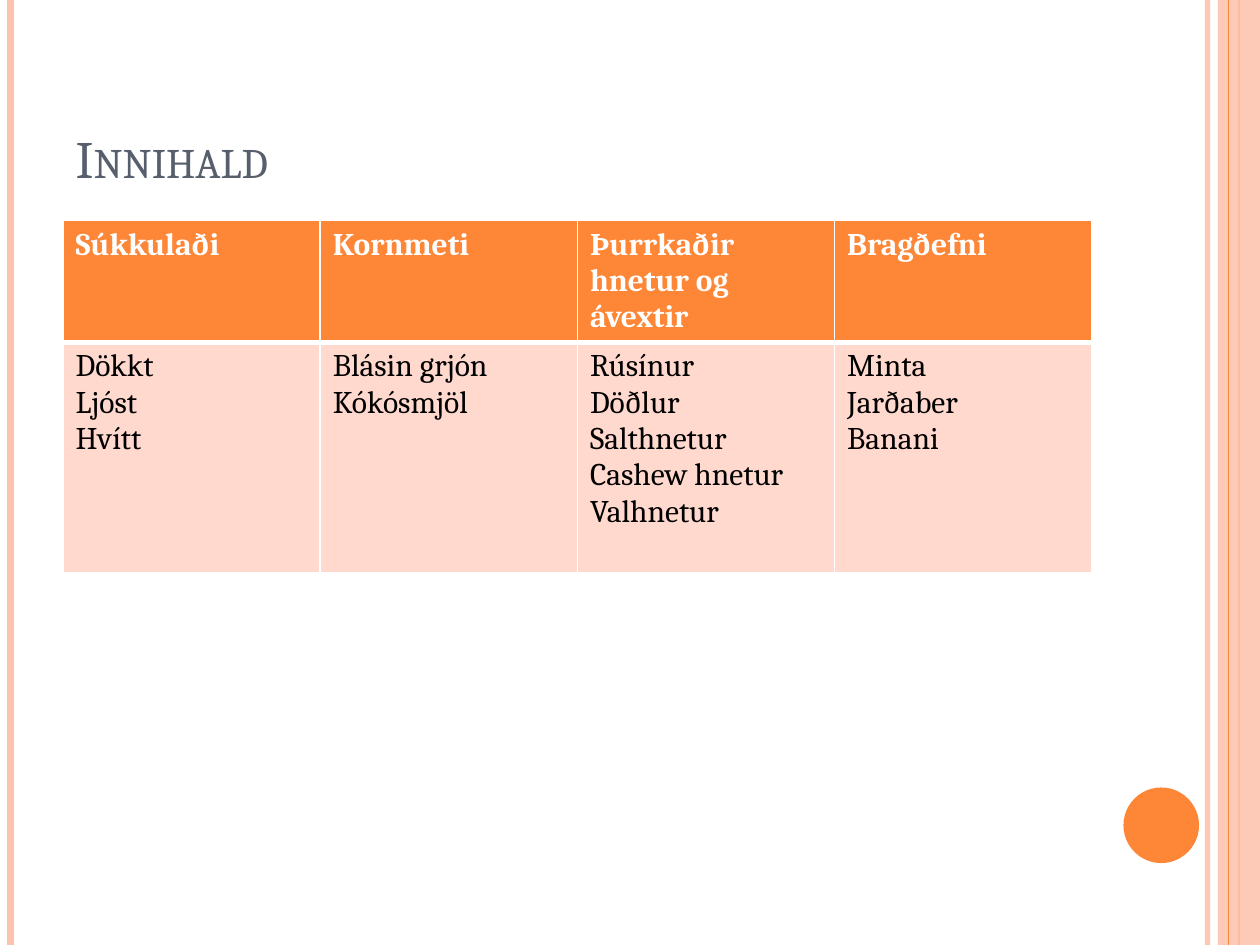
"""Build the ingredients slide with its table."""
from pptx import Presentation
from pptx import util as u
from pptx.dml import color
from pptx.enum import shapes, text
from pptx.oxml import ns
from lxml import etree

FACE = "Cambria"
ORANGE, PEACH, PALE, WHITE = "FE8637", "FEC3AE", "FFD9CE", "FFFFFF"
WIDE, HIGH = 720, 540
HEADS = ["Súkkulaði", "Kornmeti", "Þurrkaðir hnetur og ávextir", "Bragðefni"]
ITEMS = [
    "Dökkt\nLjóst\nHvítt",
    "Blásin grjón\nKókósmjöl",
    "Rúsínur\nDöðlur\nSalthnetur\nCashew hnetur\nValhnetur",
    "Minta\nJarðaber\nBanani",
]


def pts(*nums):
    """Turn numbers into point lengths."""
    return [u.Pt(n) for n in nums]


def paint(form, shade):
    """Give a fill or font colour format a solid hex colour."""
    if hasattr(form, "solid"):
        form.solid()
        form = form.fore_color
    form.rgb = color.RGBColor.from_string(shade)


def fade(part, share):
    """Set the opacity of the solid colour in an element, in percent."""
    tone = next(part.iter(ns.qn("a:srgbClr")))
    etree.SubElement(tone, ns.qn("a:alpha"), val=str(share * 1000))


def style(run, shade, **looks):
    """Apply font values and a colour to a run."""
    for name, value in {"name": FACE, **looks}.items():
        setattr(run.font, name, value)
    paint(run.font.color, shade)


def rule(slide, left, shade, width, share=100):
    """Draw a full-height vertical line."""
    line = slide.shapes.add_connector(
        shapes.MSO_CONNECTOR.STRAIGHT, *pts(left, 0, left, HIGH))
    line.line.width = u.Pt(width)
    paint(line.line.fill, shade)
    props = line._element.spPr
    etree.SubElement(props, ns.qn("a:effectLst"))
    if share < 100:
        fade(props, share)


def block(slide, kind, box, shade, share=100):
    """Draw a plain filled shape."""
    shape = slide.shapes.add_shape(kind, *pts(*box))
    shape.shadow.inherit = False
    shape.line.fill.background()
    paint(shape.fill, shade)
    if share < 100:
        fade(shape._element.spPr, share)


def head(slide, words):
    """Place and format the title."""
    title = slide.shapes.title
    place = dict(zip(("left", "top", "width", "height"), pts(36, 21.6, 588, 90)))
    for name, value in place.items():
        setattr(title, name, value)
    frame = title.text_frame
    frame.text = words
    frame.vertical_anchor = text.MSO_ANCHOR.BOTTOM
    para = frame.paragraphs[0]
    para.alignment = text.PP_ALIGN.LEFT
    run = para.runs[0]
    style(run, "575F6D", size=u.Pt(30))
    run._r.get_or_add_rPr().set("cap", "small")


def edge(cell, sides):
    """Draw white cell borders of the given widths."""
    props = cell._tc.get_or_add_tcPr()
    for side, width in sides.items():
        line = etree.SubElement(props, ns.qn("a:ln" + side), w=str(u.Pt(width)))
        fill = etree.SubElement(line, ns.qn("a:solidFill"))
        etree.SubElement(fill, ns.qn("a:srgbClr"), val=WHITE)


def grid(slide):
    """Build the table of ingredients."""
    rows = [
        (HEADS, 69, ORANGE, WHITE, True, {"L": 1, "R": 1, "T": 1, "B": 3}),
        (ITEMS, 131.5, PALE, "000000", False, {"L": 1, "R": 1, "T": 3, "B": 1}),
    ]
    table = slide.shapes.add_table(
        len(rows), len(HEADS), *pts(36, 126, 588, 200.5)).table
    for row, (words, tall, back, ink, bold, sides) in zip(table.rows, rows):
        row.height = u.Pt(tall)
        for cell, word in zip(row.cells, words):
            edge(cell, sides)
            paint(cell.fill, back)
            cell.text = word
            for para in cell.text_frame.paragraphs:
                style(para.runs[0], ink, size=u.Pt(18), bold=bold)


def main():
    """Build and save the slide."""
    deck = Presentation()
    deck.slide_width, deck.slide_height = pts(WIDE, HIGH)
    slide = deck.slides.add_slide(deck.slide_layouts[5])
    rule(slide, 690, PEACH, 3, 93)
    rule(slide, 6, PEACH, 4.5)
    rule(slide, 708, ORANGE, 1.5)
    block(slide, shapes.MSO_SHAPE.RECTANGLE, (696, 0, 24, HIGH), PEACH, 87)
    rule(slide, 702, ORANGE, 0.75)
    block(slide, shapes.MSO_SHAPE.OVAL, (642, 450, 43.2, 43.2), ORANGE)
    head(slide, "Innihald")
    grid(slide)
    deck.save("out.pptx")


if __name__ == "__main__":
    main()
